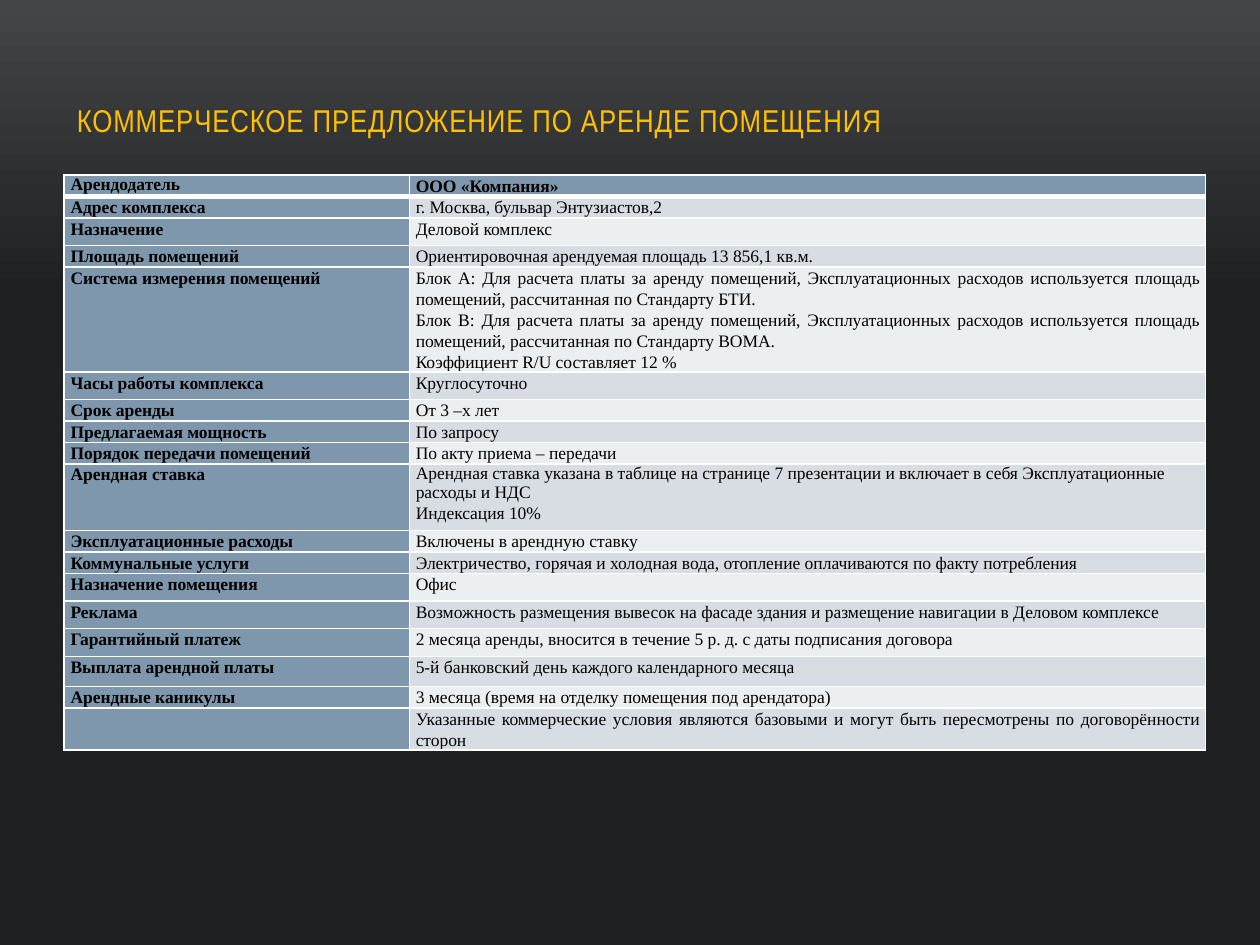
import copy
from dataclasses import dataclass

import pptx
import pptx.dml.color
import pptx.enum.text
import pptx.oxml
import pptx.oxml.ns
import pptx.util
from pptx.util import Inches

qn = pptx.oxml.ns.qn
Align = pptx.enum.text.PP_ALIGN


@dataclass(frozen=True)
class Theme:
    backdrop: tuple = ((0, "444546"), (0.31, "1E2021"), (1, "1C1E20"))
    title_color: str = "FFC000"
    text_color: str = "000000"
    label_fill: str = "7E97AD"
    band_fills: tuple = ("ECEFF1", "D8DDE3")
    border_color: str = "FFFFFF"
    border: float = 1
    header_border: float = 3
    title_font: str = "Arial Narrow"
    table_font: str = "Times New Roman"
    title_size: int = 18
    title_tracking: int = 50
    table_size: int = 10
    line_spacing: int = 12


THEME = Theme()

TERMS = [
    (0.17, "Арендодатель", ["ООО «Компания»"]),
    (0.17, "Адрес комплекса", ["г. Москва, бульвар Энтузиастов,2"]),
    (0.22, "Назначение", ["Деловой комплекс"]),
    (0.17, "Площадь помещений", ["Ориентировочная арендуемая площадь 13 856,1 кв.м."]),
    (0.83, "Система измерения помещений", [
        "Блок А: Для расчета платы за аренду помещений, Эксплуатационных расходов "
        "используется площадь помещений, рассчитанная по Стандарту БТИ.",
        "Блок В: Для расчета платы за аренду помещений, Эксплуатационных расходов "
        "используется площадь помещений, рассчитанная по Стандарту ВОМА.",
        "Коэффициент R/U составляет 12 %"]),
    (0.22, "Часы работы комплекса", ["Круглосуточно"]),
    (0.17, "Срок аренды", ["От 3 –х лет"]),
    (0.17, "Предлагаемая мощность", ["По запросу"]),
    (0.17, "Порядок передачи помещений", ["По акту приема – передачи"]),
    (0.53, "Арендная ставка", [
        "Арендная ставка указана в таблице на странице 7 презентации и включает "
        "в себя Эксплуатационные расходы и НДС",
        "Индексация 10%"]),
    (0.17, "Эксплуатационные расходы", ["Включены в арендную ставку"]),
    (0.17, "Коммунальные услуги", [
        "Электричество, горячая и холодная вода, отопление оплачиваются "
        "по факту потребления"]),
    (0.22, "Назначение помещения", ["Офис"]),
    (0.22, "Реклама", [
        "Возможность размещения вывесок на фасаде здания и размещение навигации "
        "в Деловом комплексе"]),
    (0.22, "Гарантийный платеж", [
        "2 месяца аренды, вносится в течение 5 р. д. с даты подписания договора"]),
    (0.24, "Выплата арендной платы", ["5-й банковский день каждого календарного месяца"]),
    (0.17, "Арендные каникулы", ["3 месяца (время на отделку помещения под арендатора)"]),
    (0.33, "", [
        "Указанные коммерческие условия являются базовыми и могут быть "
        "пересмотрены по договорённости сторон"]),
]
SINGLE_SPACED = {"Арендодатель", TERMS[9][2][0]}


def rgb(value):
    return pptx.dml.color.RGBColor.from_string(value)


def style_span(span, font, size, color, bold=False):
    span.font.name = font
    span.font.size = pptx.util.Pt(size)
    span.font.color.rgb = rgb(color)
    span.font.bold = bold


def paint_background(page):
    fill = page.background.fill
    fill.gradient()
    fill.gradient_angle = 270
    stops = page.element.find(".//" + qn("a:gsLst"))
    stops.append(copy.deepcopy(stops[0]))
    for stop, (position, color) in zip(fill.gradient_stops, THEME.backdrop):
        stop.position = position
        stop.color.rgb = rgb(color)


def place_title(page, box, text):
    title = page.shapes.title
    title.left, title.top, title.width, title.height = box
    frame = title.text_frame
    frame.text = text
    frame.word_wrap = True
    frame.auto_size = pptx.enum.text.MSO_AUTO_SIZE.NONE
    frame.vertical_anchor = pptx.enum.text.MSO_ANCHOR.BOTTOM
    para = frame.paragraphs[0]
    para.alignment = Align.LEFT
    span = para.runs[0]
    style_span(span, THEME.title_font, THEME.title_size, THEME.title_color)
    span.font._element.set("spc", str(THEME.title_tracking))


def set_borders(cell, top, bottom):
    properties = cell._tc.get_or_add_tcPr()
    widths = {"L": THEME.border, "R": THEME.border, "T": top, "B": bottom}
    for index, (side, width) in enumerate(widths.items()):
        line = pptx.oxml.parse_xml(
            f'<a:ln{side} {pptx.oxml.ns.nsdecls("a")} w="{pptx.util.Pt(width)}">'
            f'<a:solidFill><a:srgbClr val="{THEME.border_color}"/></a:solidFill>'
            f'</a:ln{side}>')
        properties.insert(index, line)


def fill_cell(cell, paragraphs, color, bold):
    cell.margin_left = cell.margin_right = Inches(0.05)
    cell.margin_top = cell.margin_bottom = 0
    cell.fill.solid()
    cell.fill.fore_color.rgb = rgb(color)
    cell.text_frame.text = "\n".join(paragraphs)
    for para in cell.text_frame.paragraphs:
        if para.text not in SINGLE_SPACED:
            para.alignment = Align.JUSTIFY
            para.line_spacing = pptx.util.Pt(THEME.line_spacing)
        for span in para.runs:
            style_span(span, THEME.table_font, THEME.table_size, THEME.text_color, bold)


def place_terms(page, box, terms):
    table = page.shapes.add_table(len(terms), 2, *box).table
    table.first_row = table.horz_banding = False
    table.columns[0].width = Inches(2.74)
    table.columns[1].width = box[2] - Inches(2.74)
    for index, (height, label, details) in enumerate(terms):
        header = index == 0
        table.rows[index].height = Inches(height)
        detail_fill = THEME.label_fill if header else THEME.band_fills[index % 2]
        fill_cell(table.cell(index, 0), [label], THEME.label_fill, True)
        fill_cell(table.cell(index, 1), details, detail_fill, header)
        top = THEME.header_border if index == 1 else THEME.border
        bottom = THEME.header_border if header else THEME.border
        for column in range(2):
            set_borders(table.cell(index, column), top, bottom)


def main():
    deck = pptx.Presentation()
    deck.slide_width, deck.slide_height = Inches(10), Inches(7.5)
    page = deck.slides.add_slide(deck.slide_layouts[5])
    paint_background(page)
    place_title(page, (Inches(0.51), Inches(0.6), Inches(8.82), Inches(0.55)),
                "КОММЕРЧЕСКОЕ ПРЕДЛОЖЕНИЕ ПО АРЕНДЕ ПОМЕЩЕНИЯ")
    place_terms(page, (Inches(0.51), Inches(1.39), Inches(9.06), Inches(4.62)), TERMS)
    deck.save("out.pptx")


if __name__ == "__main__":
    main()
